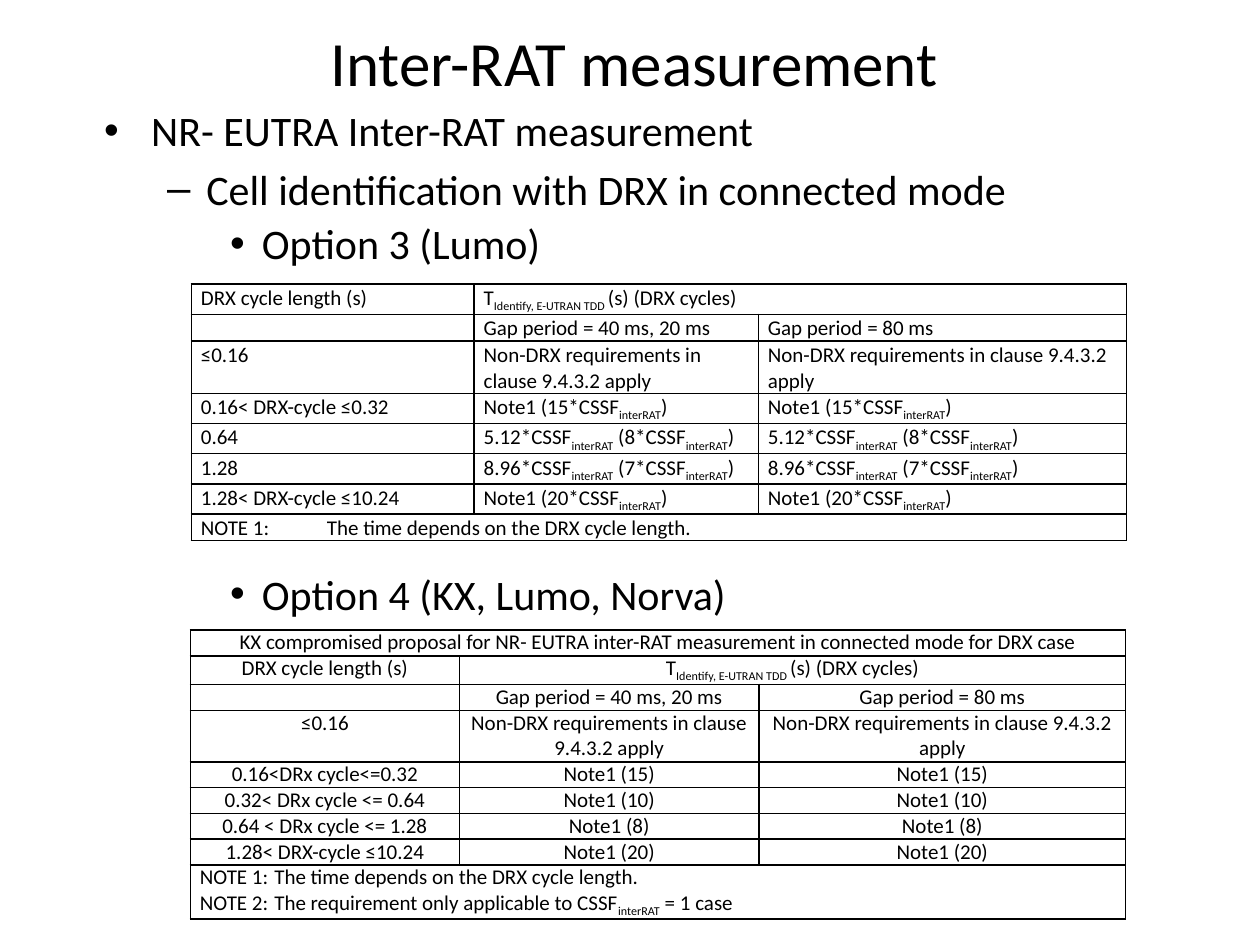
from lxml.etree import SubElement
from pptx import Presentation
from pptx.dml.color import RGBColor
from pptx.enum.text import MSO_ANCHOR, PP_ALIGN
from pptx.oxml.ns import qn
from pptx.util import Cm, Pt

COLORS = {"text": "000000", "border": "000000"}
FONT = "Calibri"
T_IDENTIFY = "T|Identify, E-UTRAN TDD |(s) (DRX cycles)"
GAPS = ["Gap period = 40 ms, 20 ms", "Gap period = 80 ms"]
NON_DRX = "Non-DRX requirements in clause 9.4.3.2 apply"
NOTE = "NOTE 1:\tThe time depends on the DRX cycle length."

OPTION_3 = [
    ["DRX cycle length (s)", T_IDENTIFY, None],
    ["", *GAPS],
    ["≤0.16", NON_DRX, NON_DRX],
    ["0.16< DRX-cycle ≤0.32"] + ["Note1 (15*CSSF|interRAT|)"] * 2,
    ["0.64"] + ["5.12*CSSF|interRAT| (8*CSSF|interRAT|)"] * 2,
    ["1.28"] + ["8.96*CSSF|interRAT| (7*CSSF|interRAT|)"] * 2,
    ["1.28< DRX-cycle ≤10.24"] + ["Note1 (20*CSSF|interRAT|)"] * 2,
    [NOTE, None, None],
]
OPTION_4 = [
    ["KX compromised proposal for NR- EUTRA inter-RAT measurement "
     "in connected mode for DRX case", None, None],
    ["DRX cycle length (s)", T_IDENTIFY, None],
    ["", *GAPS],
    ["≤0.16", NON_DRX, NON_DRX],
    ["0.16<DRx cycle<=0.32"] + ["Note1 (15)"] * 2,
    ["0.32< DRx cycle <= 0.64"] + ["Note1 (10)"] * 2,
    ["0.64 < DRx cycle <= 1.28"] + ["Note1 (8)"] * 2,
    ["1.28< DRX-cycle ≤10.24"] + ["Note1 (20)"] * 2,
    [NOTE + "\nNOTE 2:\tThe requirement only applicable to CSSF|interRAT| = 1 case",
     None, None],
]


def write(p, text, size=12, align=PP_ALIGN.LEFT, before=0, left=0, hanging=0, bullet=None):
    p.alignment = align
    p.space_before = Pt(before)
    pPr = p._p.get_or_add_pPr()
    pPr.set("marL", str(Cm(left)))
    pPr.set("indent", str(-Cm(hanging)))
    if bullet:
        SubElement(pPr, qn("a:buFont"), typeface="Arial")
        SubElement(pPr, qn("a:buChar"), char=bullet)
    if not text:
        SubElement(p._p, qn("a:endParaRPr"), sz=str(size * 100))
        return
    for i, part in enumerate(text.split("|")):
        r = p.add_run()
        r.text = part
        r.font.size = Pt(size)
        r.font.name = FONT
        r.font.color.rgb = RGBColor.from_string(COLORS["text"])
        if i % 2:
            r.font._element.set("baseline", "-25000")


def add_text_box(s, left, top, width, height, anchor=MSO_ANCHOR.TOP):
    tf = s.shapes.add_textbox(Cm(left), Cm(top), Cm(width), Cm(height)).text_frame
    tf.word_wrap = True
    tf.vertical_anchor = anchor
    return tf


def add_option(s, top, text):
    tf = add_text_box(s, 1.85, top, 22.86, 1.4)
    write(tf.paragraphs[0], text, size=24, before=4.8, left=3.18, hanging=0.64, bullet="•")


def format_cell(cell, inset_top):
    cell.margin_left = cell.margin_right = Cm(0.19)
    cell.margin_top, cell.margin_bottom = Cm(inset_top), Cm(0)
    tcPr = cell._tc.get_or_add_tcPr()
    for side in ("lnL", "lnR", "lnT", "lnB"):
        ln = SubElement(tcPr, qn(f"a:{side}"), w=str(Pt(1)))
        fill = SubElement(ln, qn("a:solidFill"))
        SubElement(fill, qn("a:srgbClr"), val=COLORS["border"])
    cell.fill.background()


def add_grid(s, left, top, widths, heights, rows, align, inset_top=0, note_indent=0):
    table = s.shapes.add_table(len(rows), len(widths), Cm(left), Cm(top),
                               Cm(sum(widths)), Cm(sum(heights))).table
    table.first_row = table.horz_banding = False
    for col, width in zip(table.columns, widths):
        col.width = Cm(width)
    for row, height in zip(table.rows, heights):
        row.height = Cm(height)
    for i, texts in enumerate(rows):
        for j, text in enumerate(texts):
            cell = table.cell(i, j)
            format_cell(cell, inset_top)
            if text is None:
                continue
            if None in texts[j + 1:j + 2]:
                cell.merge(table.cell(i, len(texts) - 1))
            is_note = text.startswith("NOTE")
            indent = note_indent if is_note else 0
            tf = cell.text_frame
            for k, line in enumerate(text.split("\n")):
                p = tf.add_paragraph() if k else tf.paragraphs[0]
                write(p, line, align=PP_ALIGN.LEFT if is_note else align,
                      left=indent, hanging=indent)


def main():
    prs = Presentation()
    prs.slide_width, prs.slide_height = Cm(25.4), Cm(19.05)
    s = prs.slides.add_slide(prs.slide_layouts[6])

    tf = add_text_box(s, 1.5, -0.03, 22.86, 2.54, MSO_ANCHOR.MIDDLE)
    write(tf.paragraphs[0], "Inter-RAT measurement ", size=36, align=PP_ALIGN.CENTER)

    tf = add_text_box(s, 1.85, 1.98, 22.86, 3)
    write(tf.paragraphs[0], "NR- EUTRA Inter-RAT measurement",
          size=24, before=4.8, left=0.95, hanging=0.95, bullet="•")
    write(tf.add_paragraph(), "Cell identification with DRX in connected mode",
          size=24, before=4.8, left=2.06, hanging=0.79, bullet="–")

    add_option(s, 4.27, "Option 3 (Lumo)")
    add_grid(s, 3.86, 5.73, [5.7, 5.73, 7.42],
             [0.6, 0.54, 1.05, 0.6, 0.6, 0.6, 0.6, 0.54],
             OPTION_3, PP_ALIGN.LEFT, inset_top=0.03)

    add_option(s, 11.33, "Option 4 (KX, Lumo, Norva)")
    add_grid(s, 3.84, 12.7, [5.42, 6.04, 7.39],
             [0.52, 0.57, 0.52, 1.04, 0.52, 0.52, 0.52, 0.52, 1.08],
             OPTION_4, PP_ALIGN.CENTER, note_indent=1.5)

    prs.save("out.pptx")


if __name__ == "__main__":
    main()
